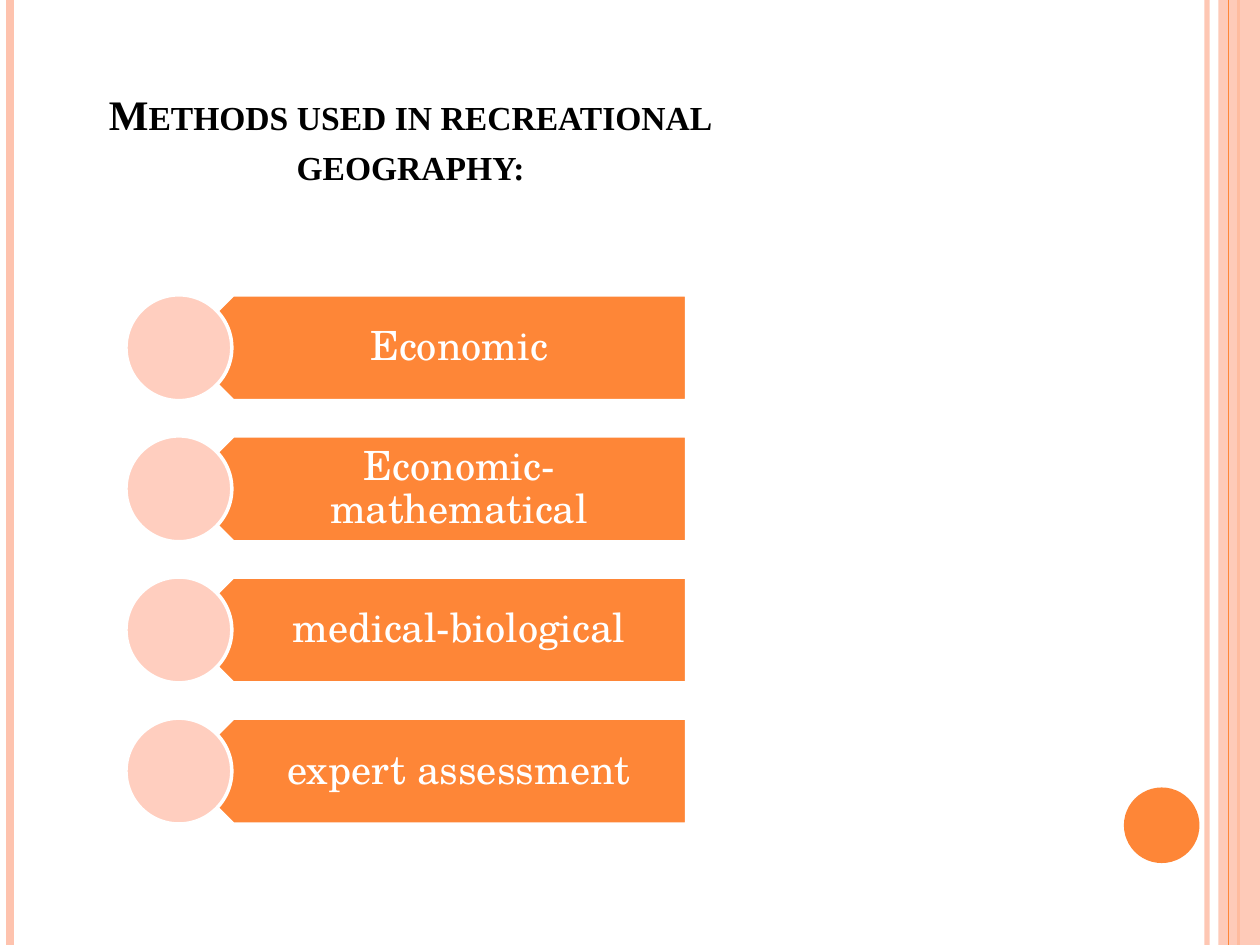
from dataclasses import dataclass

from lxml import etree
from pptx import Presentation
from pptx.dml.color import RGBColor
from pptx.enum.shapes import MSO_CONNECTOR, MSO_SHAPE
from pptx.enum.text import MSO_ANCHOR, PP_ALIGN
from pptx.oxml.ns import qn
from pptx.util import Inches, Pt

STRAIGHT = MSO_CONNECTOR.STRAIGHT
RECTANGLE = MSO_SHAPE.RECTANGLE
OVAL = MSO_SHAPE.OVAL
PENTAGON = MSO_SHAPE.PENTAGON
CENTER = PP_ALIGN.CENTER
MIDDLE = MSO_ANCHOR.MIDDLE
BOTTOM = MSO_ANCHOR.BOTTOM

TITLE_ONLY = 5
SLIDE_WIDTH, SLIDE_HEIGHT = 10, 7.5


@dataclass(frozen=True)
class Theme:
    orange: str = "FE8637"
    peach: str = "FEC3AE"
    pale_peach: str = "FFCEBF"
    white: str = "FFFFFF"
    black: str = "000000"
    title_font: str = "Times New Roman"
    body_font: str = "TeX Gyre Schola"
    title_size: int = 24
    body_size: int = 23
    outline: int = 2


def set_opacity(fill, percent):
    """Make a solid fill partly transparent."""
    color = fill._xPr.find(qn("a:solidFill"))[0]
    etree.SubElement(color, qn("a:alpha")).set("val", str(percent * 1000))


class SlideBuilder:
    """Holds the theme and the slide being drawn."""

    def __init__(self, slide, theme):
        self.slide = slide
        self.theme = theme

    def vertical_line(self, x, color, width, opacity=100):
        line = self.slide.shapes.add_connector(
            STRAIGHT, Inches(x), Inches(0), Inches(x), Inches(SLIDE_HEIGHT))
        line.line.color.rgb = RGBColor.from_string(color)
        line.line.width = Pt(width)
        if opacity < 100:
            set_opacity(line.line.fill, opacity)
        etree.SubElement(line._element.spPr, qn("a:effectLst"))

    def shape(self, kind, box, color, outlined=False, opacity=100, rotation=0):
        shape = self.slide.shapes.add_shape(kind, *map(Inches, box))
        shape.shadow.inherit = False
        shape.rotation = rotation
        shape.fill.solid()
        shape.fill.fore_color.rgb = RGBColor.from_string(color)
        if opacity < 100:
            set_opacity(shape.fill, opacity)
        if outlined:
            shape.line.color.rgb = RGBColor.from_string(self.theme.white)
            shape.line.width = Pt(self.theme.outline)
        else:
            shape.line.fill.background()

    def add_run(self, paragraph, text, font, size, color):
        run = paragraph.add_run()
        run.text = text
        run.font.name = font
        run.font.size = Pt(size)
        run.font.color.rgb = RGBColor.from_string(color)
        return run

    def label(self, text, box):
        frame = self.slide.shapes.add_textbox(*map(Inches, box)).text_frame
        frame.word_wrap = True
        frame.vertical_anchor = MIDDLE
        frame.margin_left, frame.margin_right = Inches(0.38), Inches(0.18)
        frame.margin_top = frame.margin_bottom = Inches(0.1)
        paragraph = frame.paragraphs[0]
        paragraph.alignment = CENTER
        paragraph.line_spacing = 0.9
        self.add_run(paragraph, text, self.theme.body_font,
                     self.theme.body_size, self.theme.white)

    def title(self, text, box):
        title = self.slide.shapes.title
        title.left, title.top, title.width, title.height = map(Inches, box)
        title.text_frame.word_wrap = True
        title.text_frame.vertical_anchor = BOTTOM
        paragraph = title.text_frame.paragraphs[0]
        paragraph.alignment = CENTER
        run = self.add_run(paragraph, text, self.theme.title_font,
                           self.theme.title_size, self.theme.black)
        run.font.bold = True
        run.font._element.set("cap", "small")

    def method_row(self, text, top):
        """Draw a left-pointing banner with its label and leading circle."""
        size = 0.84
        self.shape(PENTAGON, (1.43, top, 4.02, size), self.theme.orange,
                   outlined=True, rotation=180)
        self.label(text, (1.64, top, 3.81, size))
        self.shape(OVAL, (1, top, size, size), self.theme.pale_peach, outlined=True)


def draw_side_bands(builder):
    theme = builder.theme
    builder.vertical_line(9.58, theme.peach, 3, opacity=93)
    builder.vertical_line(0.08, theme.peach, 4.5)
    builder.vertical_line(9.83, theme.orange, 1.5)
    builder.shape(RECTANGLE, (9.67, 0, 0.33, SLIDE_HEIGHT), theme.peach, opacity=87)
    builder.vertical_line(9.75, theme.orange, 0.75)
    builder.shape(OVAL, (8.92, 6.25, 0.6, 0.6), theme.orange)


def main():
    presentation = Presentation()
    presentation.slide_width = Inches(SLIDE_WIDTH)
    presentation.slide_height = Inches(SLIDE_HEIGHT)
    slide = presentation.slides.add_slide(presentation.slide_layouts[TITLE_ONLY])
    builder = SlideBuilder(slide, Theme())

    draw_side_bands(builder)
    builder.title("Methods used in recreational geography:", (0.5, 0.3, 5.52, 1.25))

    methods = ["Economic", "Economic-mathematical",
               "medical-biological", "expert assessment"]
    first_top, row_pitch = 2.34, 1.12
    for index, method in enumerate(methods):
        builder.method_row(method, first_top + index * row_pitch)

    presentation.save("out.pptx")


if __name__ == "__main__":
    main()
